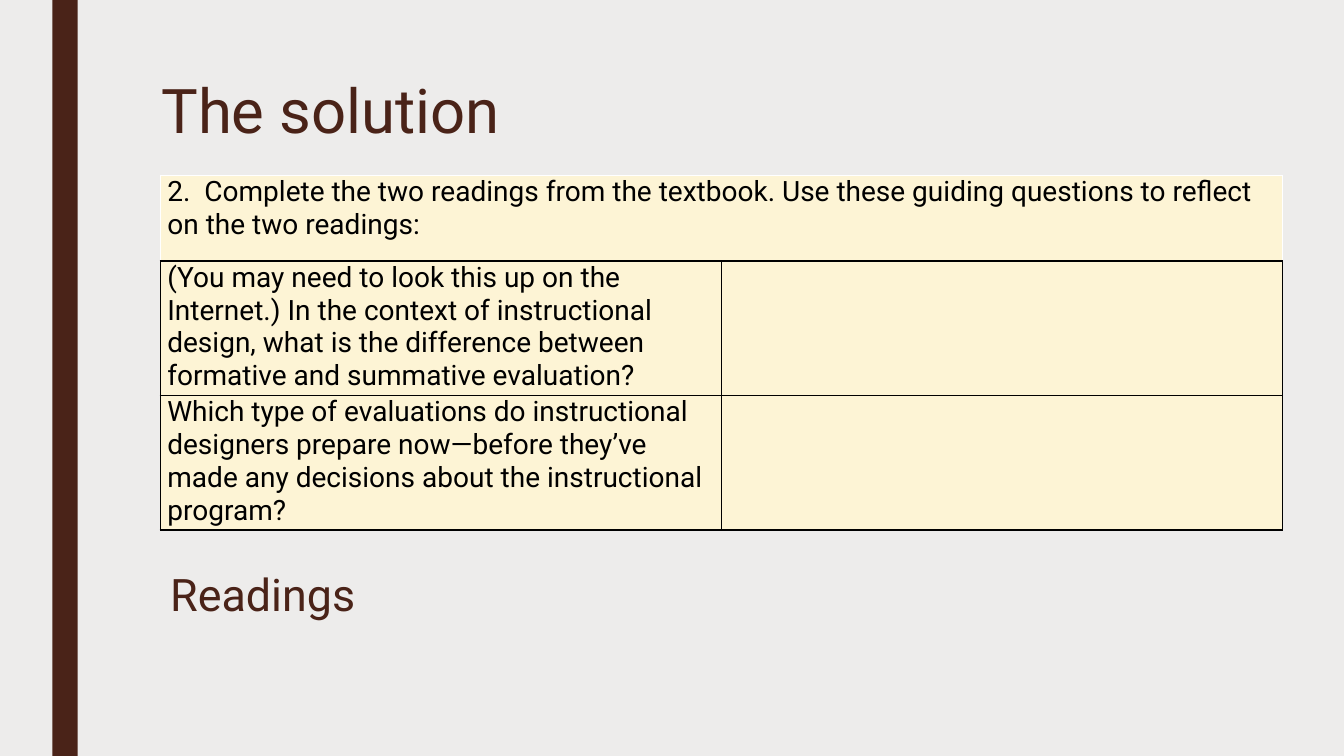
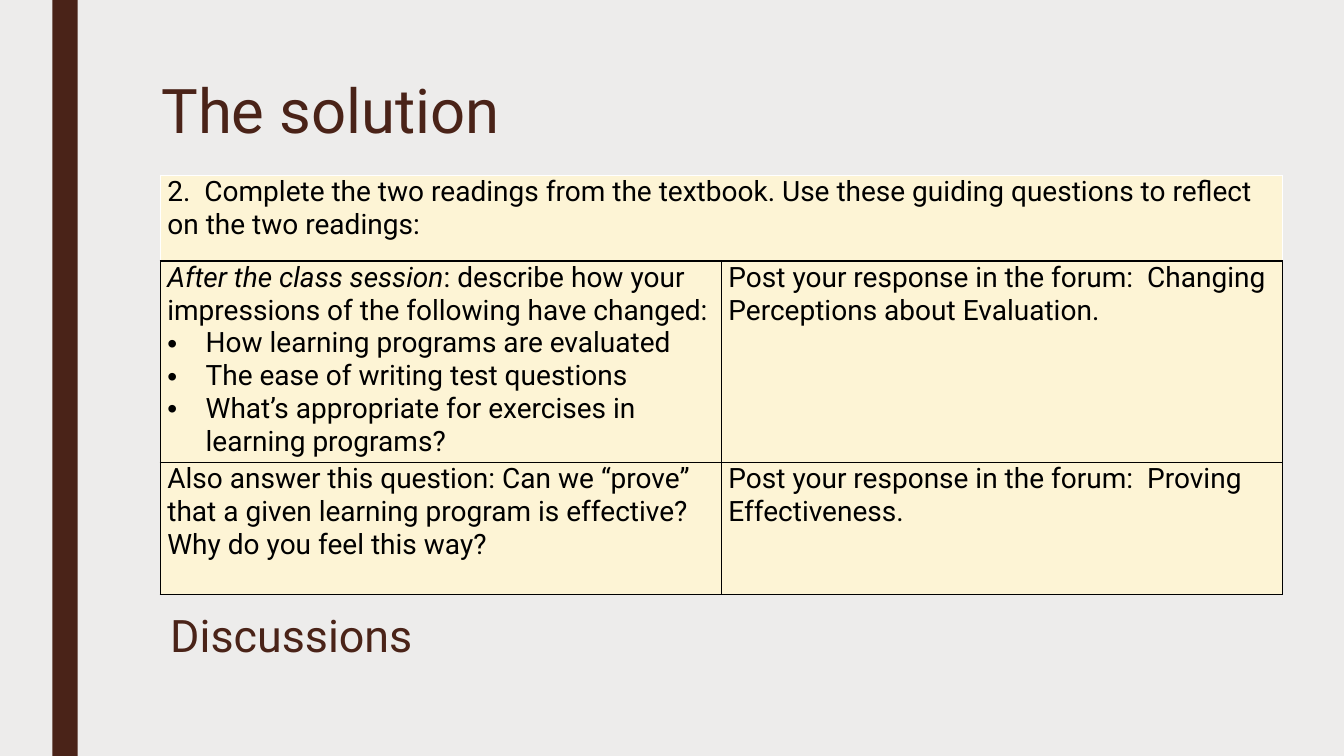
"""Build two slides with guiding questions for readings and discussions."""
from lxml import etree
from pptx import Presentation
from pptx.dml.color import RGBColor
from pptx.enum.shapes import MSO_SHAPE
from pptx.enum.text import MSO_ANCHOR, PP_ALIGN
from pptx.oxml.ns import qn
from pptx.util import Inches, Pt

RECTANGLE = MSO_SHAPE.RECTANGLE
TOP = MSO_ANCHOR.TOP
LEFT = PP_ALIGN.LEFT
TITLE_ONLY = 5
FONT = "Roboto"
COLORS = {
    "background": "EDECEB",
    "brown": "4A2318",
    "cream": "FDF4D5",
    "black": "000000",
    "white": "FFFFFF",
}
TABLE_LEFT, TABLE_TOP, TABLE_WIDTH = 1.59, 1.74, 11.13
HEADER_HEIGHT = 0.85
CELL_MARGIN = 0.07
BULLET_INDENT = 0.38
TITLE = "The solution"
INSTRUCTION = (
    "2.  Complete the two readings from the textbook. "
    "Use these guiding questions to reflect on the two readings:"
)
SLIDES = [
    {
        "caption": "Readings",
        "caption_top": 5.62,
        "row_heights": [1.31, 1.3],
        "rows": [
            [
                ["(You may need to look this up on the Internet.) In the context of "
                 "instructional design, what is the difference between formative "
                 "and summative evaluation?"],
                [],
            ],
            [
                ["Which type of evaluations do instructional designers prepare "
                 "now—before they’ve made any decisions about the instructional "
                 "program?"],
                [],
            ],
        ],
    },
    {
        "caption": "Discussions",
        "caption_top": 6.02,
        "row_heights": [1.96, 1.31],
        "rows": [
            [
                [
                    [("After the class session", True),
                     (": describe how your impressions of the following have changed:",
                      False)],
                    "• How learning programs are evaluated",
                    "• The ease of writing test questions",
                    "• What’s appropriate for exercises in learning programs?",
                ],
                ["Post your response in the forum:  Changing Perceptions about "
                 "Evaluation."],
            ],
            [
                ["Also answer this question: Can we “prove” that a given learning "
                 "program is effective?  Why do you feel this way?"],
                ["Post your response in the forum:  Proving Effectiveness."],
            ],
        ],
    },
]


def rgb(name):
    """Return the named palette colour."""
    return RGBColor.from_string(COLORS[name])


def add_bullet(paragraph):
    """Give a paragraph a hanging round bullet."""
    properties = paragraph._p.get_or_add_pPr()
    properties.set("marL", str(Inches(BULLET_INDENT)))
    properties.set("indent", str(-Inches(BULLET_INDENT)))
    etree.SubElement(properties, qn("a:buFont"), typeface="Arial")
    etree.SubElement(properties, qn("a:buChar"), char="•")


def write_text(frame, paragraphs, size=20, color="black", line_spacing=None):
    """Write paragraphs, each a string or a list of (text, italic) runs."""
    frame.word_wrap = True
    for index, content in enumerate(paragraphs):
        paragraph = frame.add_paragraph() if index else frame.paragraphs[0]
        paragraph.alignment = LEFT
        if line_spacing:
            paragraph.line_spacing = line_spacing
        runs = [(content, False)] if isinstance(content, str) else content
        if runs[0][0].startswith("• "):
            add_bullet(paragraph)
        for text, italic in runs:
            run = paragraph.add_run()
            run.text = text.removeprefix("• ")
            run.font.name = FONT
            run.font.size = Pt(size)
            run.font.italic = italic
            run.font.color.rgb = rgb(color)


def style_cell(cell, borders):
    """Set the margins, borders and fill of a table cell."""
    cell.margin_left = cell.margin_right = Inches(CELL_MARGIN)
    cell.margin_top = cell.margin_bottom = 0
    cell.vertical_anchor = TOP
    properties = cell._tc.get_or_add_tcPr()
    for side, color in zip("LRTB", borders):
        line = etree.SubElement(properties, qn(f"a:ln{side}"), w=str(Pt(1)))
        fill = etree.SubElement(line, qn("a:solidFill"))
        etree.SubElement(fill, qn("a:srgbClr"), val=COLORS[color])
    cell.fill.solid()
    cell.fill.fore_color.rgb = rgb("cream")


def add_side_bar(slide):
    """Add the vertical brown bar."""
    bar = slide.shapes.add_shape(
        RECTANGLE, Inches(0.52), 0, Inches(0.25), Inches(7.5))
    bar.shadow.inherit = False
    bar.fill.solid()
    bar.fill.fore_color.rgb = rgb("brown")
    bar.line.fill.background()


def place_title(slide):
    """Move the title placeholder and write the title."""
    title = slide.shapes.title
    title.left, title.top = Inches(1.5), Inches(0.75)
    title.width, title.height = Inches(10.5), Inches(1.62)
    title.text_frame.vertical_anchor = TOP
    write_text(title.text_frame, [TITLE], size=44, color="brown", line_spacing=0.89)


def add_caption(slide, caption, top):
    """Add the topic name below the table."""
    box = slide.shapes.add_textbox(
        Inches(TABLE_LEFT), Inches(top), Inches(4.86), Inches(0.65))
    write_text(box.text_frame, [caption], size=32, color="brown", line_spacing=0.94)


def add_questions(slide, rows, row_heights):
    """Add the table with its merged instruction row and question rows."""
    heights = [HEADER_HEIGHT, *row_heights]
    table = slide.shapes.add_table(
        len(heights), 2, Inches(TABLE_LEFT), Inches(TABLE_TOP),
        Inches(TABLE_WIDTH), Inches(sum(heights))).table
    table.first_row = table.horz_banding = False
    for row, height in zip(table.rows, heights):
        row.height = Inches(height)
    table.cell(0, 0).merge(table.cell(0, 1))
    for row_index, contents in enumerate([[[INSTRUCTION], []], *rows]):
        borders = ["black"] * 4 if row_index else ["white"] * 3 + ["black"]
        for column, paragraphs in enumerate(contents):
            cell = table.cell(row_index, column)
            style_cell(cell, borders)
            write_text(cell.text_frame, paragraphs)


def main():
    """Build and save the presentation."""
    presentation = Presentation()
    presentation.slide_width = Inches(13.33)
    presentation.slide_height = Inches(7.5)
    background = presentation.slide_master.background.fill
    background.solid()
    background.fore_color.rgb = rgb("background")
    for content in SLIDES:
        slide = presentation.slides.add_slide(presentation.slide_layouts[TITLE_ONLY])
        add_side_bar(slide)
        place_title(slide)
        add_caption(slide, content["caption"], content["caption_top"])
        add_questions(slide, content["rows"], content["row_heights"])
    presentation.save("out.pptx")


if __name__ == "__main__":
    main()
